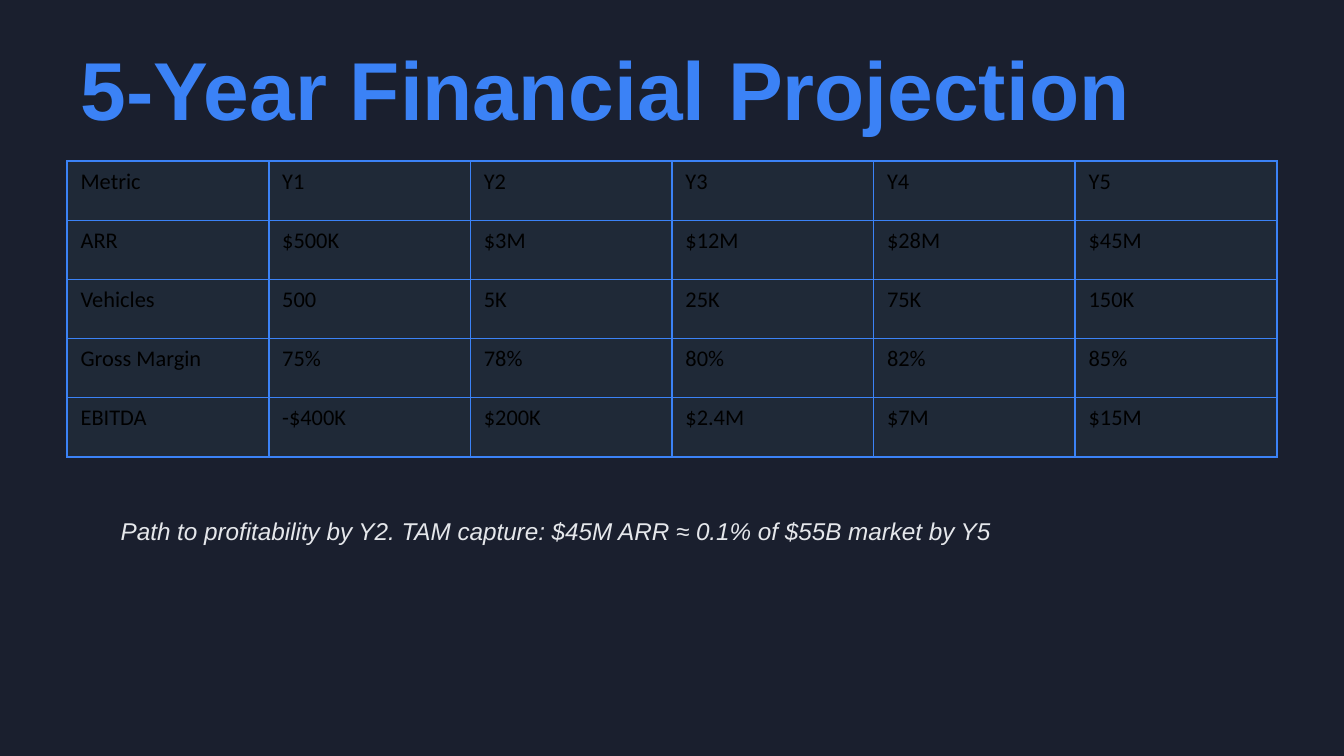
from lxml import etree
from pptx import Presentation
from pptx.dml.color import RGBColor
from pptx.enum.text import MSO_ANCHOR, MSO_AUTO_SIZE, PP_ALIGN
from pptx.oxml.ns import qn
from pptx.util import Pt

PX = 4572
LEFT = PP_ALIGN.LEFT
MIDDLE = MSO_ANCHOR.MIDDLE
NO_AUTOFIT = MSO_AUTO_SIZE.NONE

NAVY = RGBColor(0x1A, 0x1F, 0x2E)
SLATE = RGBColor(0x1F, 0x29, 0x37)
BLUE = RGBColor(0x3B, 0x82, 0xF6)
BLACK = RGBColor(0x00, 0x00, 0x00)
PALE = RGBColor(0xE5, 0xE7, 0xEB)

PROJECTION = [
    ["Metric", "Y1", "Y2", "Y3", "Y4", "Y5"],
    ["ARR", "$500K", "$3M", "$12M", "$28M", "$45M"],
    ["Vehicles", "500", "5K", "25K", "75K", "150K"],
    ["Gross Margin", "75%", "78%", "80%", "82%", "85%"],
    ["EBITDA", "-$400K", "$200K", "$2.4M", "$7M", "$15M"],
]
COLUMN_WIDTH = 300
ROW_HEIGHT = 88


def add_run(paragraph, text, font_name, size, color):
    run = paragraph.add_run()
    run.text = text
    run.font.name = font_name
    run.font.size = Pt(size)
    run.font.color.rgb = color
    return run


def add_borders(cell, color, width):
    properties = cell._tc.get_or_add_tcPr()
    for side in ("lnL", "lnR", "lnT", "lnB"):
        line = etree.SubElement(properties, qn(f"a:{side}"), w=str(Pt(width)))
        fill = etree.SubElement(line, qn("a:solidFill"))
        etree.SubElement(fill, qn("a:srgbClr"), val=str(color))


prs = Presentation()
prs.slide_width = 2000 * PX
prs.slide_height = 1125 * PX
slide = prs.slides.add_slide(prs.slide_layouts[5])
slide.background.fill.solid()
slide.background.fill.fore_color.rgb = NAVY

title = slide.shapes.title
title.left, title.top = 100 * PX, 80 * PX
title.width, title.height = 1800 * PX, 100 * PX
title.text_frame.auto_size = NO_AUTOFIT
title.text_frame.vertical_anchor = MIDDLE
heading = title.text_frame.paragraphs[0]
heading.alignment = LEFT
add_run(heading, "5-Year Financial Projection", "Arial", 44, BLUE).font.bold = True

row_count, column_count = len(PROJECTION), len(PROJECTION[0])
projection = slide.shapes.add_table(
    row_count, column_count, 100 * PX, 240 * PX,
    column_count * COLUMN_WIDTH * PX, row_count * ROW_HEIGHT * PX,
).table
projection.first_row = False
projection.horz_banding = False
for row, values in enumerate(PROJECTION):
    for column, value in enumerate(values):
        cell = projection.cell(row, column)
        add_borders(cell, BLUE, 1)
        cell.fill.solid()
        cell.fill.fore_color.rgb = SLATE
        add_run(cell.text_frame.paragraphs[0], value, "Calibri", 12, BLACK)

outlook = slide.shapes.add_textbox(160 * PX, 740 * PX, 1680 * PX, 100 * PX).text_frame
outlook.word_wrap = True
outlook.vertical_anchor = MIDDLE
add_run(
    outlook.paragraphs[0],
    "Path to profitability by Y2. TAM capture: $45M ARR ≈ 0.1% of $55B market by Y5",
    "Arial", 13, PALE,
).font.italic = True

prs.save("out.pptx")
